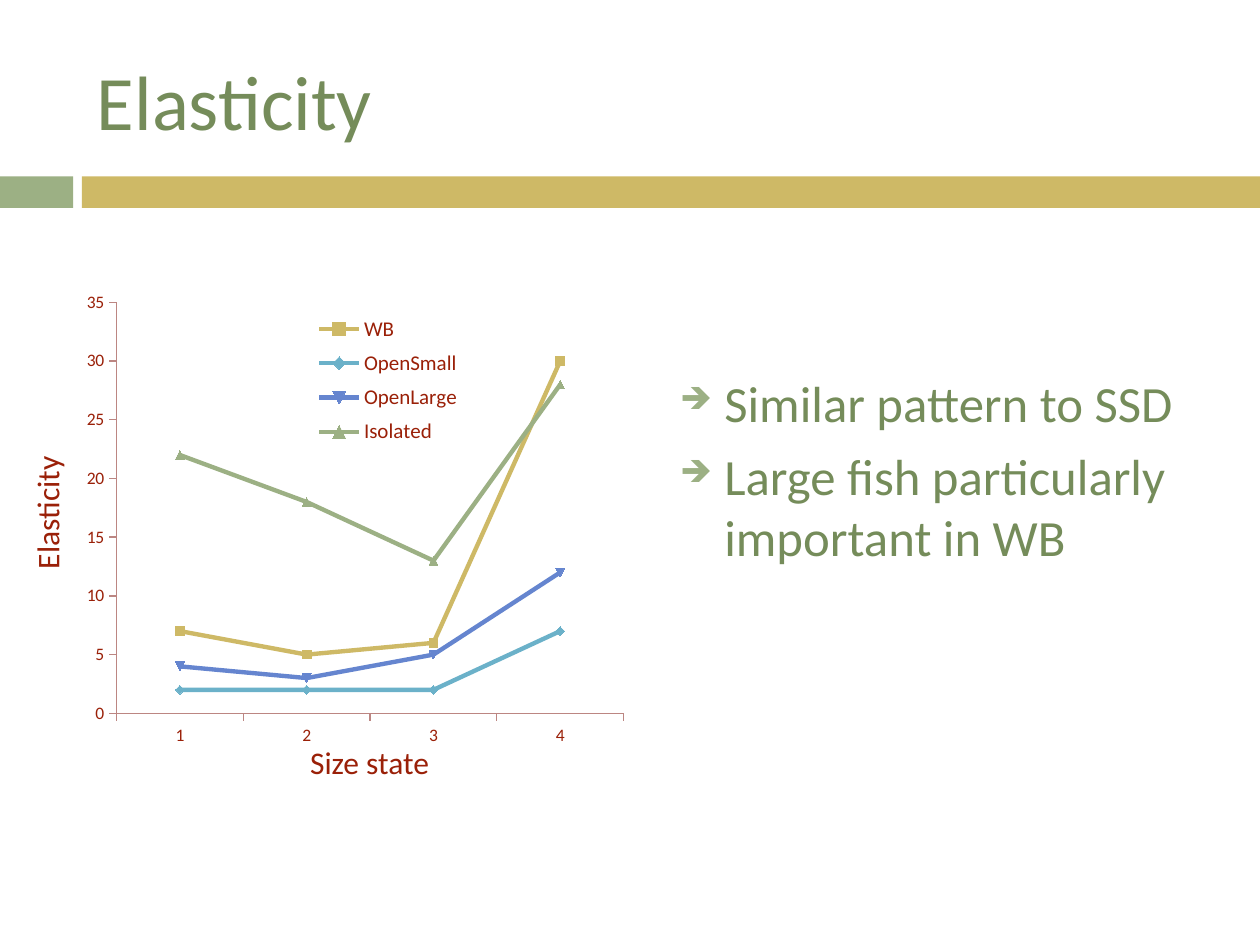
import lxml.etree
import pptx
import pptx.chart.data
import pptx.dml.color
import pptx.enum.chart
import pptx.enum.shapes
import pptx.enum.text
import pptx.oxml
import pptx.oxml.ns
import pptx.util

WIDTH, HEIGHT = 10, 7.5
FONT = "Calibri"
GREEN, SAGE, GOLD, RED, AXIS = "758C5A", "9CB084", "CEB966", "9A2008", "BC8682"
CATEGORIES = ["1", "2", "3", "4"]
SERIES = [
    ("WB", GOLD, (7, 5, 6, 30)),
    ("OpenSmall", "6BB1C9", (2, 2, 2, 7)),
    ("OpenLarge", "6585CF", (4, 3, 5, 12)),
    ("Isolated", SAGE, (22, 18, 13, 28)),
]
BULLETS = ["Similar pattern to SSD", "Large fish particularly important in WB"]


def color(value):
    """Turn a hex string into a colour."""
    return pptx.dml.color.RGBColor.from_string(value)


def inches(box):
    """Convert a box in inches to slide lengths."""
    return [pptx.util.Inches(length) for length in box]


def within(box, left, top, width, height):
    """Return the part of a box given by shares of its size."""
    return (box[0] + left * box[2], box[1] + top * box[3], width * box[2], height * box[3])


def style_font(font, size, value):
    """Set the typeface, size and colour of a font."""
    font.name, font.size, font.bold = FONT, pptx.util.Pt(size), False
    font.color.rgb = color(value)


def add_text(slide, box, lines, size, value, wrap=True):
    """Add a text box with one paragraph per line."""
    shape = slide.shapes.add_textbox(*inches(box))
    frame = shape.text_frame
    frame.word_wrap = wrap
    frame.text = "\n".join(lines)
    for paragraph in frame.paragraphs:
        for run in paragraph.runs:
            style_font(run.font, size, value)
    return shape


def add_band(slide, box):
    """Draw the two-part band across the box."""
    for left, width, value in ((0, 0.058, SAGE), (0.065, 0.935, GOLD)):
        shape = slide.shapes.add_shape(
            pptx.enum.shapes.MSO_SHAPE.RECTANGLE, *inches(within(box, left, 0, width, 1)))
        shape.shadow.inherit = False
        shape.fill.solid()
        shape.fill.fore_color.rgb = color(value)
        shape.line.fill.background()


def add_title(slide, box):
    """Add the slide title, centred vertically in the box."""
    shape = add_text(slide, box, ["Elasticity"], 44, GREEN)
    shape.text_frame.vertical_anchor = pptx.enum.text.MSO_ANCHOR.MIDDLE


def add_bullets(slide, box):
    """Add the arrow-bulleted findings."""
    shape = add_text(slide, box, BULLETS, 29, GREEN)
    for index, paragraph in enumerate(shape.text_frame.paragraphs):
        properties = paragraph._p.get_or_add_pPr()
        indent = pptx.util.Inches(0.35)
        properties.set("marL", str(indent))
        properties.set("indent", str(-indent))
        paragraph.space_before = pptx.util.Pt(7 if index else 0)
        bullet_color = lxml.etree.SubElement(properties, pptx.oxml.ns.qn("a:buClr"))
        lxml.etree.SubElement(bullet_color, pptx.oxml.ns.qn("a:srgbClr"), val=SAGE)
        lxml.etree.SubElement(properties, pptx.oxml.ns.qn("a:buSzPct"), val="60000")
        lxml.etree.SubElement(properties, pptx.oxml.ns.qn("a:buFont"), typeface="OpenSymbol")
        lxml.etree.SubElement(properties, pptx.oxml.ns.qn("a:buChar"), char="➔")


def set_layout(element, left, top, width, height, inner=False):
    """Fix the place of a chart part as shares of the chart."""
    layout = element.find(pptx.oxml.ns.qn("c:layout"))
    if layout is None:
        layout = lxml.etree.Element(pptx.oxml.ns.qn("c:layout"))
        element.insert(1 if element.tag.endswith("legend") else 0, layout)
    manual = lxml.etree.SubElement(layout, pptx.oxml.ns.qn("c:manualLayout"))
    entries = [("layoutTarget", "inner")] if inner else []
    entries += [("xMode", "edge"), ("yMode", "edge")]
    entries += zip("xywh", (left, top, width, height))
    for name, value in entries:
        lxml.etree.SubElement(manual, pptx.oxml.ns.qn(f"c:{name}"), val=str(value))


def style_axis(axis):
    """Give an axis its line, ticks and no gridlines."""
    axis.has_major_gridlines = False
    axis.major_tick_mark = pptx.enum.chart.XL_TICK_MARK.OUTSIDE
    axis.minor_tick_mark = pptx.enum.chart.XL_TICK_MARK.NONE
    axis.format.line.color.rgb = color(AXIS)
    axis.format.line.width = pptx.util.Pt(0.75)


def add_line_chart(slide, box):
    """Add the elasticity chart with its legend inside the plot."""
    data = pptx.chart.data.CategoryChartData()
    data.categories = CATEGORIES
    for name, _, values in SERIES:
        data.add_series(name, values)
    chart = slide.shapes.add_chart(
        pptx.enum.chart.XL_CHART_TYPE.LINE_MARKERS, *inches(box), data).chart
    style_font(chart.font, 10, RED)
    chart.has_title = False
    plot = chart.plots[0]
    plot.vary_by_categories = False
    for series, (_, value, _) in zip(plot.series, SERIES):
        series.smooth = False
        series.format.line.width = pptx.util.Pt(2.5)
        series.format.line.color.rgb = color(value)
        series.marker.size = 5
        series.marker.format.fill.solid()
        series.marker.format.fill.fore_color.rgb = color(value)
        series.marker.format.line.color.rgb = color(value)
    for axis in (chart.category_axis, chart.value_axis):
        style_axis(axis)
    chart.value_axis.minimum_scale = 0
    chart.value_axis.maximum_scale = 35
    chart.value_axis.major_unit = 5
    chart.has_legend = True
    chart.legend.position = pptx.enum.chart.XL_LEGEND_POSITION.RIGHT
    chart.legend.include_in_layout = False
    style_font(chart.legend.font, 12, RED)
    set_layout(chart.legend._element, 0.31, 0.05, 0.25, 0.31)
    plot_area = chart._chartSpace.chart.plotArea
    set_layout(plot_area, 0.06, 0.04, 0.7, 0.87, inner=True)


def add_axis_titles(slide, box):
    """Label both axes of the chart in the box."""
    vertical = add_text(slide, within(box, -0.13, 0.43, 0.19, 0.11), ["Elasticity"], 18, RED, False)
    vertical.rotation = 270
    add_text(slide, within(box, 0.31, 0.96, 0.2, 0.11), ["Size state"], 18, RED, False)


def build_slide(presentation):
    """Place every region on a blank slide."""
    slide = presentation.slides.add_slide(presentation.slide_layouts[6])
    page = (0, 0, WIDTH, HEIGHT)
    chart_box = within(page, 0.058, 0.3, 0.575, 0.5)
    add_band(slide, (0, 1.4, WIDTH, 0.25))
    add_title(slide, (0.67, 0.25, 8.92, 1.08))
    add_bullets(slide, (5.3, 2.9, 4.25, 3.84))
    add_axis_titles(slide, chart_box)
    add_line_chart(slide, chart_box)


def main():
    """Build and save the presentation."""
    presentation = pptx.Presentation()
    presentation.slide_width = pptx.util.Inches(WIDTH)
    presentation.slide_height = pptx.util.Inches(HEIGHT)
    build_slide(presentation)
    presentation.save("out.pptx")


if __name__ == "__main__":
    main()
